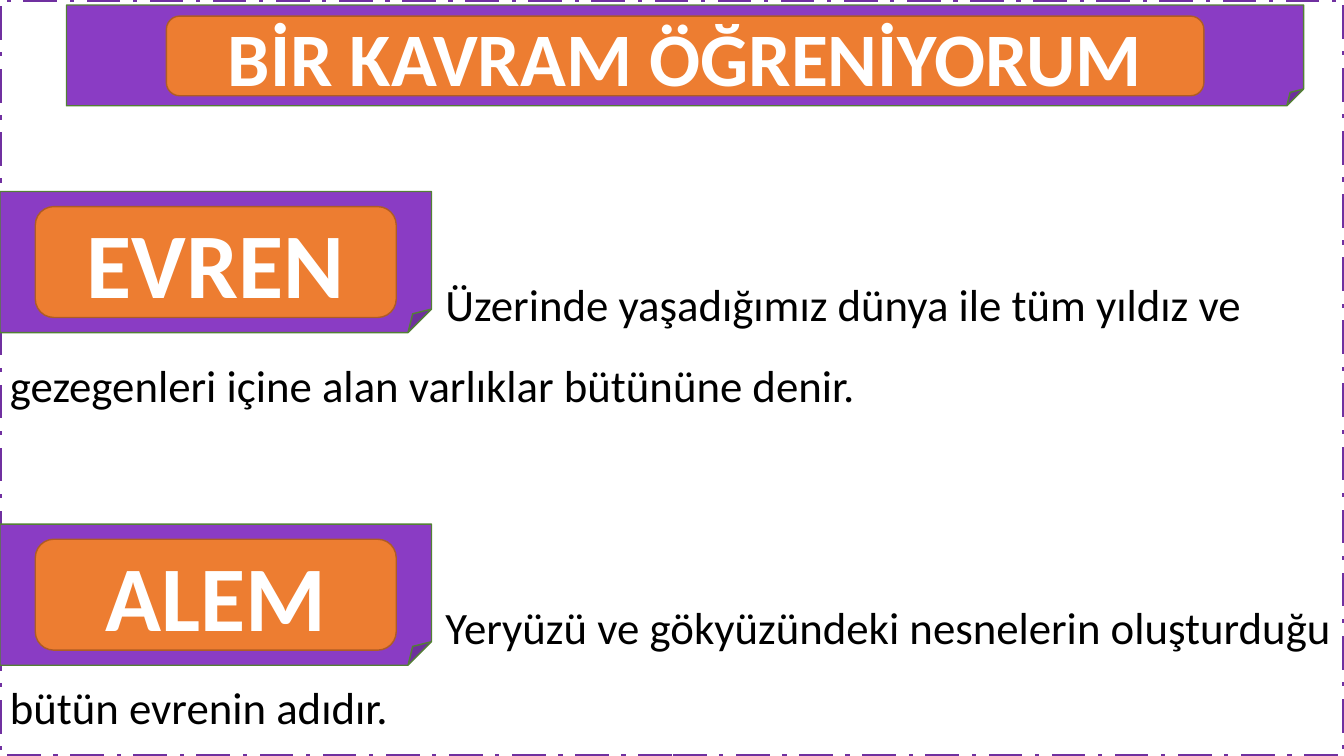
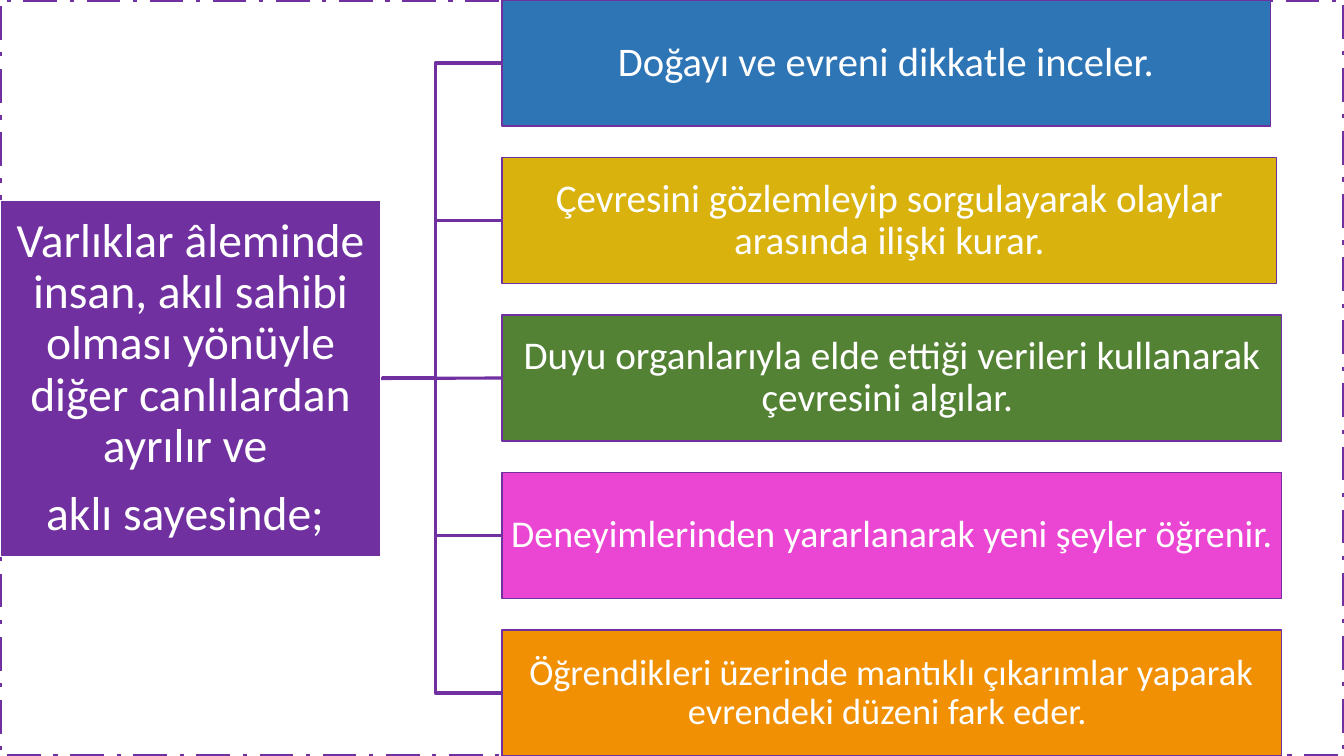
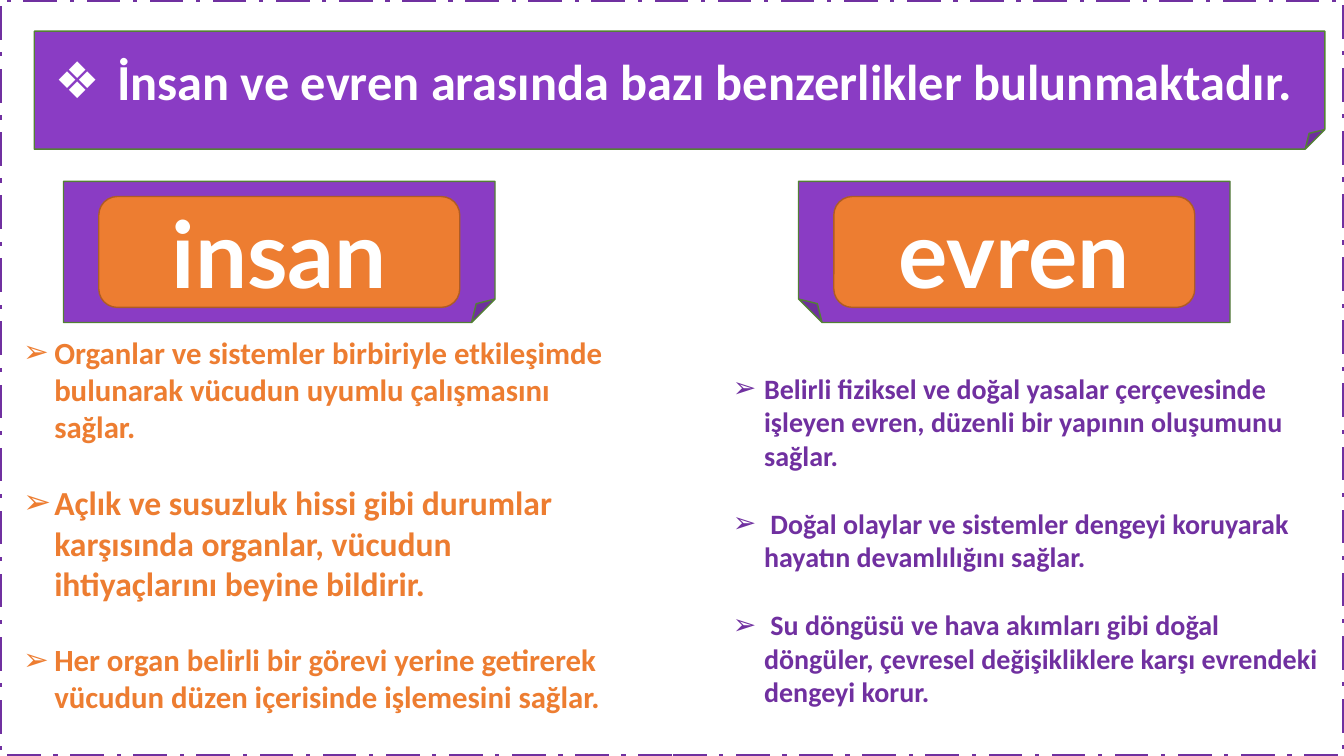
from lxml import etree
from pptx import Presentation
from pptx import util as u
from pptx.dml import color
from pptx.enum import dml, shapes, text
from pptx.oxml import ns

PURPLE, VIOLET, ORANGE, WHITE, BLACK = "7030A0", "8A3CC4", "ED7D31", "FFFFFF", "000000"
FOLD_LINE, TAG_LINE = "538035", "AF5C24"
SLIDE_WIDTH, SLIDE_HEIGHT = 13.33, 7.5
TITLE_ONLY, BLANK = 5, 6
TAG_SIZE, TAG_INSET = (4.28, 1.4), (0.35, 0.15)

CONCEPT_TITLE = "BİR KAVRAM ÖĞRENİYORUM"
CONCEPTS = [
    ("EVREN", 1.9, 2.43, "Üzerinde yaşadığımız dünya ile tüm yıldız ve gezegenleri içine alan "
                         "varlıklar bütününe denir."),
    ("ALEM", 5.2, 5.63, "Yeryüzü ve gökyüzündeki nesnelerin oluşturduğu bütün evrenin adıdır."),
]

REASON = ["Varlıklar âleminde insan, akıl sahibi olması yönüyle diğer canlılardan ayrılır ve ",
          "aklı sayesinde; "]
ABILITIES = [
    ("Doğayı ve evreni dikkatle inceler.", "2E75B6", 29, 7.62),
    ("Çevresini gözlemleyip sorgulayarak olaylar arasında ilişki kurar.", "D9B20D", 28, 7.68),
    ("Duyu organlarıyla elde ettiği verileri kullanarak çevresini algılar. ", "548235", 28, 7.73),
    ("Deneyimlerinden yararlanarak yeni şeyler öğrenir.", "EB45D3", 27, 7.73),
    ("Öğrendikleri üzerinde mantıklı çıkarımlar yaparak evrendeki düzeni fark eder. ",
     "F09002", 26, 7.73),
]

SIMILARITY_TITLE = "İnsan ve evren arasında bazı benzerlikler bulunmaktadır. "
COMPARISON = [
    dict(name="insan", tag_left=0.63, flip=False, box=(0.13, 3.26, 6.08, 3.88), color=ORANGE,
         gap=27, points=[
             ("Organlar ve sistemler birbiriyle etkileşimde bulunarak vücudun uyumlu "
              "çalışmasını sağlar.", 22),
             ("Açlık ve susuzluk hissi gibi durumlar karşısında organlar, vücudun "
              "ihtiyaçlarını beyine bildirir.", 24),
             ("Her organ belirli bir görevi yerine getirerek vücudun düzen içerisinde "
              "işlemesini sağlar.", 22)]),
    dict(name="evren", tag_left=7.92, flip=True, box=(7.17, 3.26, 6.08, 4.19), color=PURPLE,
         gap=24.4, points=[
             ("Belirli fiziksel ve doğal yasalar çerçevesinde işleyen evren, düzenli bir "
              "yapının oluşumunu sağlar.", 20),
             (" Doğal olaylar ve sistemler dengeyi koruyarak hayatın devamlılığını sağlar.", 20),
             (" Su döngüsü ve hava akımları gibi doğal döngüler, çevresel değişikliklere "
              "karşı evrendeki dengeyi korur.", 20)]),
]


def rgb(value):
    return color.RGBColor.from_string(value)


def inches(values):
    return [u.Inches(value) for value in values]


def add_box(slide, kind, box, fill, line, width=1.0, flip=False):
    shape = slide.shapes.add_shape(kind, *inches(box))
    shape.shadow.inherit = False
    shape.line.color.rgb = rgb(line)
    shape.line.width = u.Pt(width)
    shape.fill.solid()
    shape.fill.fore_color.rgb = rgb(fill)
    if flip:
        shape._element.spPr.find(ns.qn("a:xfrm")).set("flipH", "1")
    return shape


def write(shape, paragraphs, size=None, ink=WHITE, font="Calibri", bold=False, align="CENTER",
          anchor="MIDDLE", inset=(0.1, 0.05), spacing=None, gap=0, bullet=None, hanging=0,
          first_indent=0):
    frame = shape.text_frame
    frame.word_wrap = True
    frame.auto_size = text.MSO_AUTO_SIZE.NONE
    frame.vertical_anchor = text.MSO_ANCHOR[anchor]
    frame.margin_left = frame.margin_right = u.Inches(inset[0])
    frame.margin_top = frame.margin_bottom = u.Inches(inset[1])
    for index, item in enumerate(paragraphs):
        content, points = item if isinstance(item, tuple) else (item, size)
        paragraph = frame.add_paragraph() if index else frame.paragraphs[0]
        paragraph.alignment = text.PP_ALIGN[align]
        paragraph.space_before = u.Pt(gap if index else 0)
        if spacing:
            paragraph.line_spacing = spacing
        run = paragraph.add_run()
        run.text = content
        run.font.size, run.font.name, run.font.bold = u.Pt(points), font, bold
        run.font.color.rgb = rgb(ink)
        properties = paragraph._p.get_or_add_pPr()
        properties.set("marL", str(u.Inches(hanging)))
        properties.set("indent", str(u.Inches(first_indent - hanging)))
        if bullet:
            etree.SubElement(properties, ns.qn("a:buFont")).set("typeface", "Arial")
            etree.SubElement(properties, ns.qn("a:buChar")).set("char", bullet)


def add_text(slide, box, paragraphs, **style):
    write(slide.shapes.add_textbox(*inches(box)), paragraphs, **style)


def add_slide(presentation, layout):
    slide = presentation.slides.add_slide(presentation.slide_layouts[layout])
    frame = add_box(slide, shapes.MSO_SHAPE.RECTANGLE, (0, 0, SLIDE_WIDTH, SLIDE_HEIGHT),
                    WHITE, PURPLE, 3)
    frame.line.dash_style = dml.MSO_LINE.LONG_DASH_DOT
    return slide


def set_title(slide, box, content, **style):
    title = slide.shapes.title
    title.left, title.top, title.width, title.height = inches(box)
    write(title, [content], bold=True, **style)
    slide.shapes._spTree.append(title._element)


def add_banner(slide, box, flip=False):
    add_box(slide, shapes.MSO_SHAPE.FOLDED_CORNER, box, VIOLET, FOLD_LINE, flip=flip)


def add_plate(slide, box):
    return add_box(slide, shapes.MSO_SHAPE.ROUNDED_RECTANGLE, box, ORANGE, TAG_LINE)


def add_tag(slide, left, top, label, font="Calibri", flip=False):
    (width, height), (side, edge) = TAG_SIZE, TAG_INSET
    add_banner(slide, (left, top, width, height), flip)
    plate = add_plate(slide, (left + side, top + edge, width - 2 * side, height - 2 * edge))
    write(plate, [label], size=66, font=font, bold=True)


def add_link(slide, kind, start, end):
    connector = slide.shapes.add_connector(kind, *inches(start + end))
    connector.line.color.rgb = rgb(PURPLE)
    connector.line.width = u.Pt(2.25)
    etree.SubElement(connector._element.spPr, ns.qn("a:effectLst"))
    return connector


def build_concepts(presentation):
    slide = add_slide(presentation, TITLE_ONLY)
    for label, tag_top, text_top, definition in CONCEPTS:
        add_text(slide, (0, text_top, SLIDE_WIDTH, 1.7), [definition], size=32, ink=BLACK,
                 align="LEFT", anchor="TOP", spacing=u.Pt(57.6), first_indent=4.32)
        add_tag(slide, 0, tag_top, label)
    add_banner(slide, (0.66, 0.05, 12.27, 1))
    plate = (1.65, 0.16, 10.29, 0.79)
    add_plate(slide, plate)
    set_title(slide, plate, CONCEPT_TITLE, size=54)


def build_abilities(presentation):
    slide = add_slide(presentation, BLANK)
    left, height, middle = 4.98, 1.25, SLIDE_HEIGHT / 2
    step = (SLIDE_HEIGHT - height) / (len(ABILITIES) - 1)
    tops = [index * step for index in range(len(ABILITIES))]
    for top in tops:
        if top + height / 2 != middle:
            add_link(slide, shapes.MSO_CONNECTOR.ELBOW, (3.66, middle), (left, top + height / 2))
    style = dict(inset=(0.02, 0.02), spacing=0.9)
    rectangle = shapes.MSO_SHAPE.RECTANGLE
    reason = add_box(slide, rectangle, (0, 1.99, 3.78, 3.53), PURPLE, WHITE)
    write(reason, REASON, size=34, gap=12, **style)
    for top, (content, fill, size, width) in zip(tops, ABILITIES):
        ability = add_box(slide, rectangle, (left, top, width, height), fill, PURPLE)
        write(ability, [content], size=size, **style)
        if top + height / 2 == middle:
            link = add_link(slide, shapes.MSO_CONNECTOR.STRAIGHT, (3.78, middle), (left, middle))
            link.begin_connect(reason, 3)
            link.end_connect(ability, 1)


def build_comparison(presentation):
    slide = add_slide(presentation, TITLE_ONLY)
    for side in COMPARISON:
        add_text(slide, side["box"], side["points"], ink=side["color"], bold=True, align="LEFT",
                 gap=side["gap"], bullet="➢", hanging=0.31)
        add_tag(slide, side["tag_left"], 1.8, side["name"], font="Lato", flip=side["flip"])
    add_banner(slide, (0.34, 0.31, 12.8, 1.17))
    set_title(slide, (0.34, 0.31, 12.8, 0.98), SIMILARITY_TITLE, size=36, bullet="❖",
              hanging=0.62)


def main():
    presentation = Presentation()
    presentation.slide_width = u.Inches(SLIDE_WIDTH)
    presentation.slide_height = u.Inches(SLIDE_HEIGHT)
    build_concepts(presentation)
    build_abilities(presentation)
    build_comparison(presentation)
    presentation.save("out.pptx")


if __name__ == "__main__":
    main()
